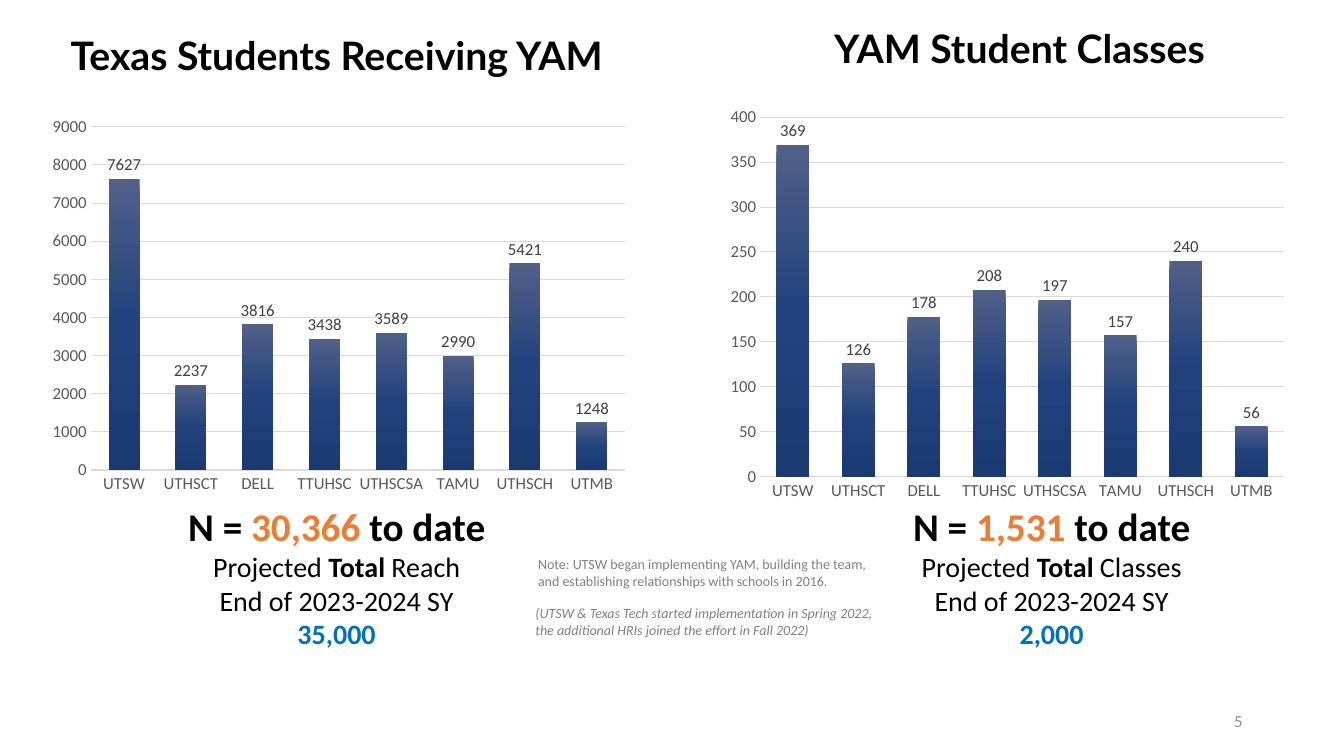
from pptx import Presentation
from pptx.chart.data import CategoryChartData as Data
from pptx.dml.color import RGBColor
from pptx.enum.chart import XL_CHART_TYPE as Kind, XL_LABEL_POSITION as Spot, XL_TICK_MARK as Tick
from pptx.enum.text import MSO_ANCHOR as Anchor, MSO_AUTO_SIZE as Fit, PP_ALIGN as Align
from pptx.oxml import parse_xml
from pptx.oxml.ns import nsdecls
from pptx.util import Inches, Pt

WIDE, HIGH = 13.33, 7.5
BLACK, ORANGE, BLUE, GRAY = "000000", "ED7D31", "0070C0", "808080"
SITES = ["UTSW", "UTHSCT", "DELL", "TTUHSC", "UTHSCSA", "TAMU", "UTHSCH", "UTMB"]
STOPS = [(0, "516089"), (50, "22427D"), (100, "1A3A72")]


def tint(code):
    """Turn a hex string into a colour."""
    return RGBColor.from_string(code)


def place(box):
    """Turn percent shares of the slide into left, top, width and height."""
    return [Inches(share * side / 100) for share, side in zip(box, (WIDE, HIGH) * 2)]


def style(font, size, color, name="Calibri", bold=False, italic=False):
    """Format a font."""
    font.size, font.name, font.bold, font.italic = Pt(size), name, bold, italic
    font.color.rgb = tint(color)


def write(shape, lines, align=Align.LEFT, anchor=Anchor.TOP, fit=Fit.NONE, space=None, **base):
    """Fill a shape with lines, each a list of (text, format changes) runs."""
    frame = shape.text_frame
    frame.word_wrap, frame.auto_size, frame.vertical_anchor = True, fit, anchor
    for i, runs in enumerate(lines):
        para = frame.paragraphs[0] if i == 0 else frame.add_paragraph()
        para.alignment = align
        if space:
            para.line_spacing = space
        for text, change in runs:
            run = para.add_run()
            run.text = text
            style(run.font, **{**base, **change})


def label(slide, box, lines, **look):
    """Add a text box at the given shares."""
    write(slide.shapes.add_textbox(*place(box)), lines, **look)


def head(shape, text):
    """Write a panel heading."""
    write(shape, [[(text, {})]], align=Align.CENTER, space=0.9,
          size=28, color=BLACK, name="Lato", bold=True)


def shade(series):
    """Fill the bars with the vertical gradient."""
    stops = "".join(f'<a:gs pos="{pos * 1000}"><a:srgbClr val="{code}"/></a:gs>'
                    for pos, code in STOPS)
    series.format.fill.background()
    props = series._element.get_or_add_spPr()
    props.replace(props[0], parse_xml(
        f'<a:gradFill {nsdecls("a")} rotWithShape="1"><a:gsLst>{stops}</a:gsLst>'
        '<a:lin ang="5400000" scaled="0"/></a:gradFill>'))


def inset(chart, area):
    """Fix the inner plot area at shares of the chart."""
    parts = "".join(f'<c:{tag} val="{val}"/>' for tag, val in zip("xywh", area))
    old = chart._chartSpace.chart.plotArea.find("{*}layout")
    if old is not None:
        old.getparent().remove(old)
    chart._chartSpace.chart.plotArea.insert(0, parse_xml(
        f'<c:layout {nsdecls("c")}><c:manualLayout><c:layoutTarget val="inner"/>'
        f'<c:xMode val="edge"/><c:yMode val="edge"/>{parts}</c:manualLayout></c:layout>'))


def bars(slide, box, vals, top, step, gap, lap=0, area=None):
    """Add a column chart of values by site."""
    data = Data()
    data.categories = SITES
    data.add_series("Series 1", vals)
    chart = slide.shapes.add_chart(Kind.COLUMN_CLUSTERED, *place(box), data).chart
    chart.has_legend = chart.has_title = False
    style(chart.font, 10, BLACK)
    cat, val = chart.category_axis, chart.value_axis
    for axis in (cat, val):
        axis.major_tick_mark = axis.minor_tick_mark = Tick.NONE
        style(axis.tick_labels.font, 12, "595959")
    val.minimum_scale, val.maximum_scale, val.major_unit = 0, top, step
    val.format.line.fill.background()
    val.has_major_gridlines = True
    for line, width in ((cat.format.line, 1), (val.major_gridlines.format.line, 0.75)):
        line.color.rgb, line.width = tint("D9D9D9"), Pt(width)
    plot = chart.plots[0]
    plot.gap_width, plot.overlap, plot.vary_by_categories = gap, lap, False
    plot.has_data_labels = True
    tags = plot.data_labels
    tags.show_value, tags.position = True, Spot.OUTSIDE_END
    style(tags.font, 12, "404040")
    shade(plot.series[0])
    if area:
        inset(chart, area)


def panel(slide, box, shape, title, top, sums, chart):
    """Place a heading, a chart and its totals around the chart's box."""
    left, over, wide, high = box
    shift, width = top
    shape.left, shape.top, shape.width, shape.height = place(
        (left + wide / 2 - width / 2 + shift, over - 9.8, width, 7.6))
    head(shape, title)
    bars(slide, box, **chart)
    count, noun, goal, shift, width = sums
    plain = {"size": 20}
    label(slide, (left + wide / 2 - width / 2 + shift, over + high - 1.5, width, 21.1), [
        [("N = ", {}), (count, {"color": ORANGE}), (" to date", {})],
        [("Projected ", {**plain, "bold": False}), ("Total", plain),
         (f" {noun}", {**plain, "bold": False})],
        [("End of 2023-2024 SY", {**plain, "bold": False})],
        [(goal, {**plain, "color": BLUE})],
    ], align=Align.CENTER, fit=Fit.SHAPE_TO_FIT_TEXT, size=28, color=BLACK, bold=True)


def notes(slide, box):
    """Place the two remarks between the panels."""
    left, top, wide, high = box
    look = {"fit": Fit.SHAPE_TO_FIT_TEXT, "size": 10, "color": GRAY}
    label(slide, (left + 0.2, top, wide - 0.4, high), [[(
        "Note: UTSW began implementing YAM, building the team, "
        "and establishing relationships with schools in 2016.", {})]], **look)
    label(slide, (left, top + 6.5, wide, high), [[(
        "(UTSW & Texas Tech started implementation in Spring 2022, "
        "the additional HRIs joined the effort in Fall 2022)", {})]], italic=True, **look)


def main():
    """Build and save the slide."""
    deck = Presentation()
    deck.slide_width, deck.slide_height = Inches(WIDE), Inches(HIGH)
    slide = deck.slides.add_slide(deck.slide_layouts[5])
    panel(slide, (2.4, 14, 45.3, 53.3), slide.shapes.title,
          "Texas Students Receiving YAM", (0, 42.3),
          ("30,366", "Reach", "35,000", 0, 28.5),
          {"vals": [7627, 2237, 3816, 3438, 3589, 2990, 5421, 1248], "top": 9000,
           "step": 1000, "gap": 115, "area": (0.096, 0.052, 0.878, 0.852)})
    panel(slide, (53.5, 13.1, 42.9, 54.2), slide.shapes.add_textbox(0, 0, 0, 0),
          "YAM Student Classes", (0.9, 39),
          ("1,531", "Classes", "2,000", 3.3, 33),
          {"vals": [369, 126, 178, 208, 197, 157, 240, 56], "top": 400,
           "step": 50, "gap": 100, "lap": -24})
    notes(slide, (39.1, 72.8, 26.9, 5.9))
    label(slide, (70.7, 92.7, 22.5, 5.3), [[("5", {})]], align=Align.RIGHT,
          anchor=Anchor.MIDDLE, size=12, color="8C8C8C")
    deck.save("out.pptx")


if __name__ == "__main__":
    main()
